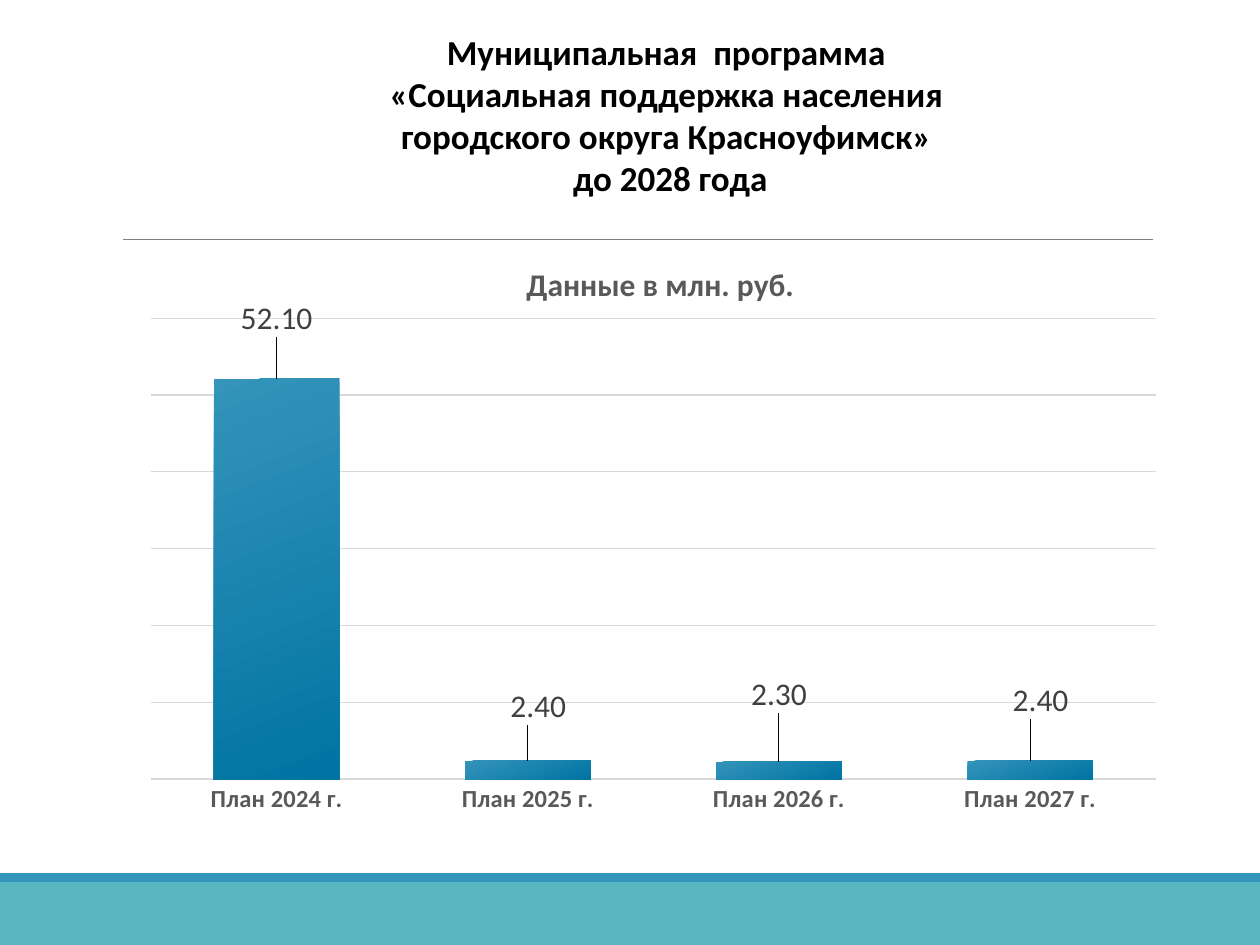
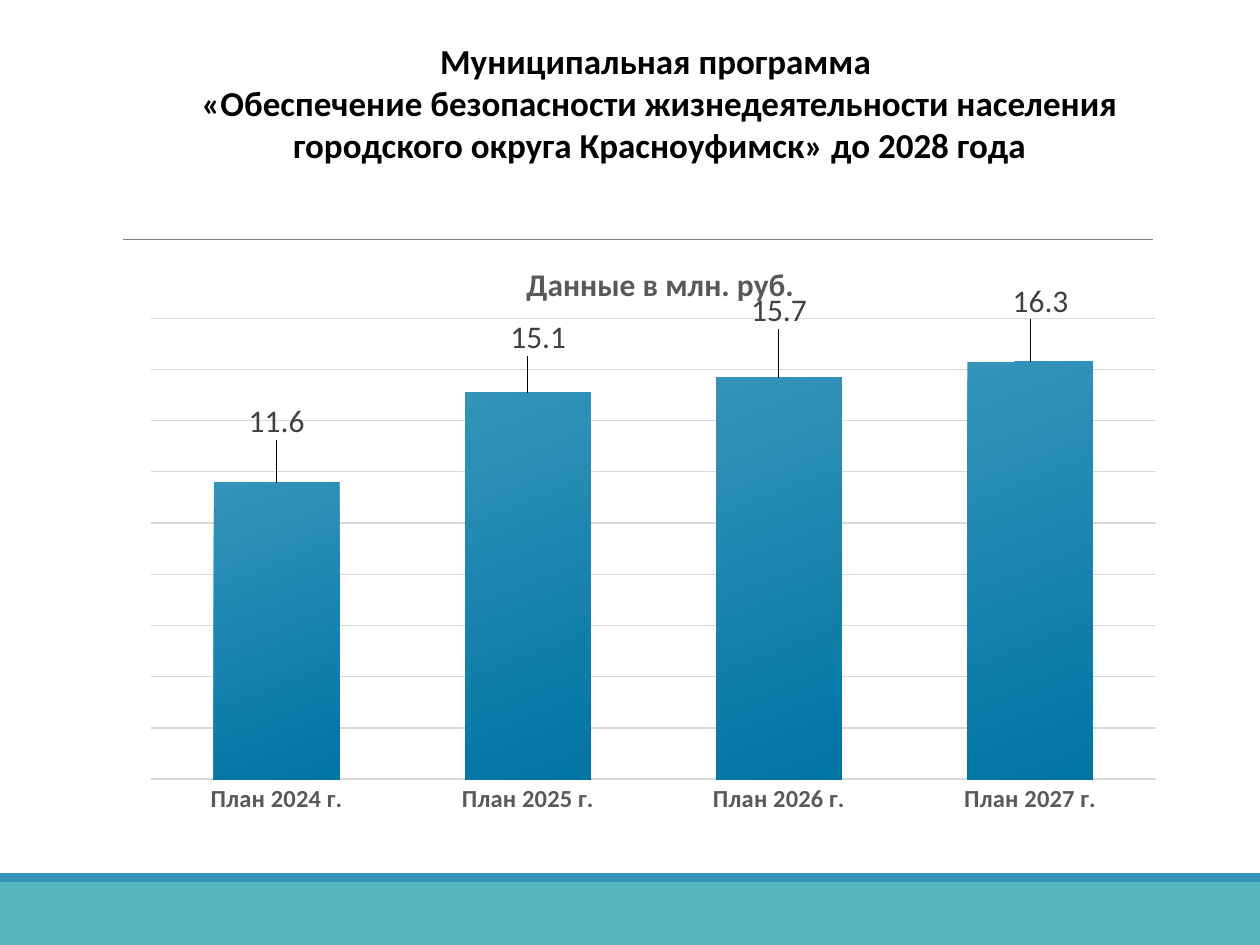
"""Build two slides on municipal programme budgets."""
from collections import namedtuple

from lxml import etree
from pptx import Presentation
from pptx import util as u
from pptx.chart.data import CategoryChartData
from pptx.dml.color import RGBColor
from pptx.enum import chart as ch
from pptx.enum import shapes, text
from pptx.oxml.ns import qn

BLACK = RGBColor(0x00, 0x00, 0x00)
RULE_GREY = RGBColor(0x80, 0x80, 0x80)
GRID_GREY = RGBColor(0xD9, 0xD9, 0xD9)
AXIS_GREY = RGBColor(0x59, 0x59, 0x59)
LABEL_GREY = RGBColor(0x40, 0x40, 0x40)
TEAL = RGBColor(0x58, 0xB6, 0xC0)
BLUE = RGBColor(0x34, 0x94, 0xBA)
DEEP_BLUE = RGBColor(0x00, 0x74, 0xA3)

FONT = "Calibri"
WIDTH, HEIGHT = u.Inches(10), u.Inches(7.5)
COLUMNS, ROWS = 100, 75

Box = namedtuple("Box", "column row columns rows")
RULE = Box(9.8, 19, 81.7, 0)
FOOTER = Box(0, 69.3, 100, 5.7)
BUDGET = Box(9.1, 19.4, 82.7, 48.8)
STRIPE_ROWS = 0.7

YEARS = [f"План {year} г." for year in range(2024, 2028)]
LABEL_SHIFTS = [(0, -0.06), (0.01, -0.05), (0, -0.07), (0.01, -0.06)]

PROGRAMMES = [
    dict(
        heading_box=Box(14.6, 1.8, 77.2, 14.5),
        heading=["Муниципальная  программа ",
                 "«Социальная поддержка населения ",
                 "городского округа Красноуфимск» ",
                 "до 2028 года"],
        amounts=[52.1, 2.4, 2.3, 2.4],
        number_format="#,##0.00", top=60, step=10,
    ),
    dict(
        heading_box=Box(13, 0.9, 78.7, 14.5),
        heading=["Муниципальная программа ",
                 "«Обеспечение безопасности жизнедеятельности населения "
                 "городского округа Красноуфимск» до 2028 года"],
        amounts=[11.6, 15.1, 15.7, 16.3],
        number_format="#,##0.0", top=18, step=2,
    ),
]


def emu(box):
    """Turn a box in grid units into slide lengths."""
    across, down = WIDTH / COLUMNS, HEIGHT / ROWS
    return (int(box.column * across), int(box.row * down),
            int(box.columns * across), int(box.rows * down))


def style(font, size, color, bold=False):
    """Apply the shared typeface with a size, colour and weight."""
    font.name, font.size, font.bold = FONT, u.Pt(size), bold
    font.color.rgb = color


def add_rule(slide, box):
    """Draw the thin line under the heading."""
    left, top, width, height = emu(box)
    rule = slide.shapes.add_connector(
        shapes.MSO_CONNECTOR.STRAIGHT, left, top, left + width, top + height)
    rule.line.color.rgb = RULE_GREY
    rule.line.width = u.Pt(0.5)
    etree.SubElement(rule._element.spPr, qn("a:effectLst"))


def add_footer(slide, box):
    """Draw the footer band with its stripe along the top."""
    stripe = box._replace(rows=STRIPE_ROWS)
    band = box._replace(row=box.row + STRIPE_ROWS, rows=box.rows - STRIPE_ROWS)
    for part, color in ((band, TEAL), (stripe, BLUE)):
        strip = slide.shapes.add_shape(shapes.MSO_SHAPE.RECTANGLE, *emu(part))
        strip.shadow.inherit = False
        strip.fill.solid()
        strip.fill.fore_color.rgb = color
        strip.line.fill.background()


def add_heading(slide, box, lines):
    """Write the centred programme name."""
    frame = slide.shapes.add_textbox(*emu(box)).text_frame
    frame.word_wrap = True
    frame.vertical_anchor = text.MSO_ANCHOR.MIDDLE
    frame.text = "\n".join(lines)
    for paragraph in frame.paragraphs:
        paragraph.alignment = text.PP_ALIGN.CENTER
        for run in paragraph.runs:
            style(run.font, 20, BLACK, bold=True)


def set_layout(parent, index, **settings):
    """Give a chart part a manual layout at a child index."""
    for old in parent.findall(qn("c:layout")):
        parent.remove(old)
    layout = etree.Element(qn("c:layout"))
    manual = etree.SubElement(layout, qn("c:manualLayout"))
    for tag, value in settings.items():
        etree.SubElement(manual, qn(f"c:{tag}")).set("val", str(value))
    parent.insert(index, layout)


def style_axes(chart, top, step):
    """Format the year axis and the hidden amount axis with its grid."""
    years, amounts = chart.category_axis, chart.value_axis
    years.major_tick_mark = ch.XL_TICK_MARK.NONE
    years.format.line.color.rgb = GRID_GREY
    years.format.line.width = u.Pt(1)
    style(years.tick_labels.font, 14, AXIS_GREY, bold=True)
    amounts.visible = False
    amounts.minimum_scale, amounts.maximum_scale = 0, top
    amounts.major_unit = step
    grid = amounts.major_gridlines.format.line
    grid.color.rgb = GRID_GREY
    grid.width = u.Pt(0.75)


def style_bars(plot, number_format):
    """Fill the bars with a gradient and lift their labels."""
    plot.gap_width, plot.overlap = 100, -24
    plot.vary_by_categories = False
    bars = plot.series[0]
    bars.invert_if_negative = False
    fill = bars.format.fill
    fill.gradient()
    fill.gradient_angle = 360 - 69
    for stop, color in zip(fill.gradient_stops, (BLUE, DEEP_BLUE)):
        stop.color.rgb = color
    labels = bars.data_labels
    labels.show_value = True
    labels.number_format = number_format
    labels.number_format_is_linked = False
    labels.position = ch.XL_LABEL_POSITION.OUTSIDE_END
    style(labels.font, 18, LABEL_GREY)
    for index, (x, y) in enumerate(LABEL_SHIFTS):
        label = bars.points[index].data_label
        style(label.font, 18, LABEL_GREY)
        label.position = ch.XL_LABEL_POSITION.OUTSIDE_END
    for entry, (x, y) in zip(labels._element.findall(qn("c:dLbl")), LABEL_SHIFTS):
        set_layout(entry, 1, x=x, y=y)


def add_budget(slide, box, amounts, number_format, top, step):
    """Chart the planned amounts by year."""
    data = CategoryChartData(number_format=number_format)
    data.categories = YEARS
    data.add_series("Series 1", amounts)
    chart = slide.shapes.add_chart(
        ch.XL_CHART_TYPE.COLUMN_CLUSTERED, *emu(box), data).chart
    chart.has_legend = False
    chart.font.name, chart.font.size = "Cambria", u.Pt(10)
    chart.font.color.rgb = BLACK
    chart.has_title = True
    title = chart.chart_title
    title.text_frame.text = "Данные в млн. руб."
    style(title.text_frame.paragraphs[0].runs[0].font, 18, AXIS_GREY, bold=True)
    title.include_in_layout = False
    set_layout(title._element, 1, xMode="edge", yMode="edge", x=0.39, y=0.02)
    style_axes(chart, top, step)
    style_bars(chart.plots[0], number_format)
    plot_area = chart._chartSpace.find(f".//{qn('c:plotArea')}")
    set_layout(plot_area, 0, layoutTarget="inner", xMode="edge", yMode="edge",
               x=0.035, y=0.12, w=0.965, h=0.75)


def add_programme(deck, heading_box, heading, **budget):
    """Add one programme slide."""
    slide = deck.slides.add_slide(deck.slide_layouts[6])
    add_rule(slide, RULE)
    add_footer(slide, FOOTER)
    add_heading(slide, heading_box, heading)
    add_budget(slide, BUDGET, **budget)


def main():
    """Build and save the deck."""
    deck = Presentation()
    deck.slide_width, deck.slide_height = WIDTH, HEIGHT
    for programme in PROGRAMMES:
        add_programme(deck, **programme)
    deck.save("out.pptx")


if __name__ == "__main__":
    main()
